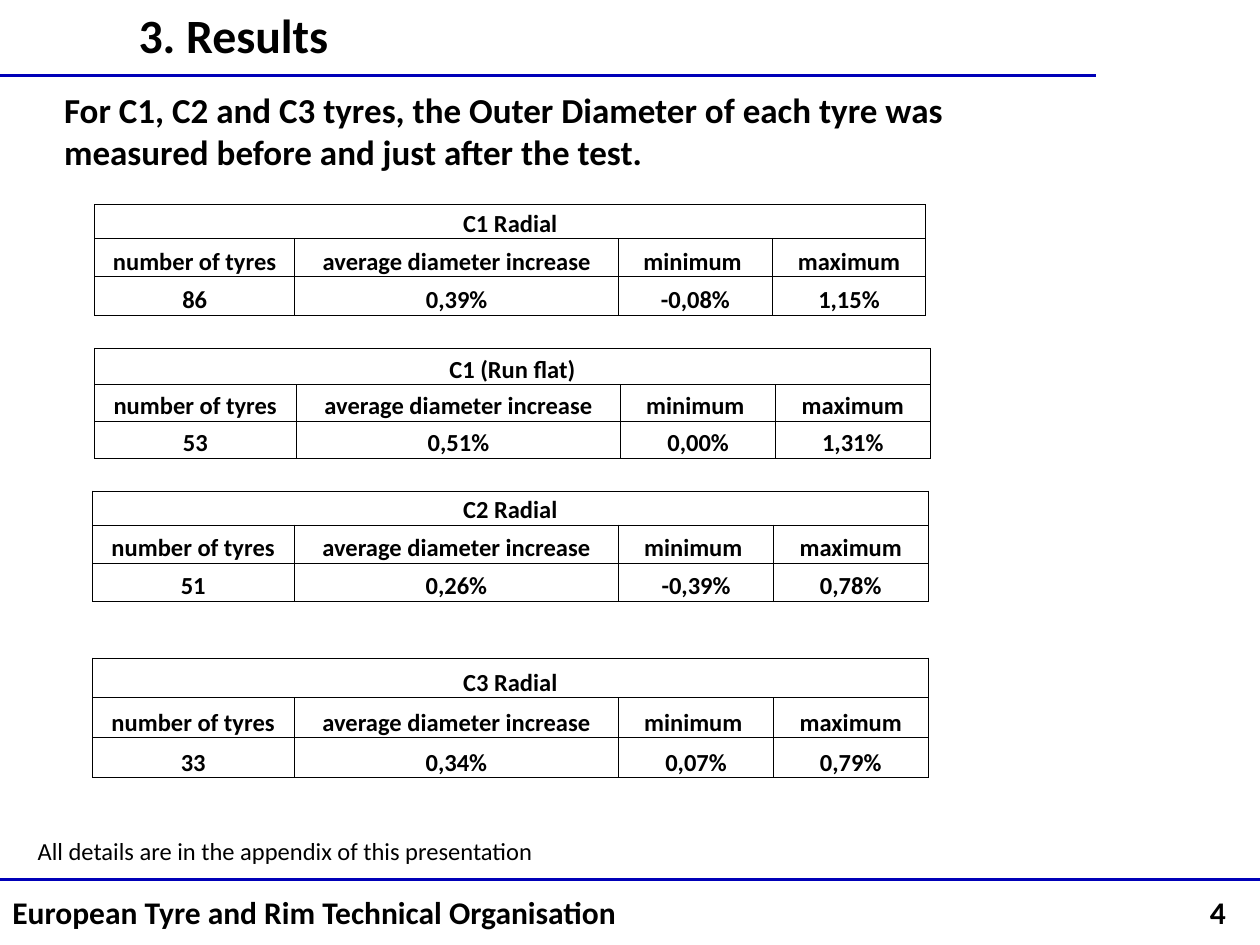
from dataclasses import dataclass

from lxml import etree
from pptx import Presentation
from pptx.dml.color import RGBColor
from pptx.enum.shapes import MSO_CONNECTOR
from pptx.enum.text import MSO_ANCHOR as Anchor, PP_ALIGN as Align
from pptx.oxml import parse_xml
from pptx.oxml.ns import nsdecls, qn
from pptx.util import Pt


@dataclass(frozen=True)
class Theme:
    font: str = "Calibri"
    ink: str = "000000"
    rule: str = "0000B8"
    rule_width: float = 1.75
    border_width: float = 0.5
    title: float = 27.3
    lead: float = 20
    footer: float = 18
    small: float = 14


class SlideBuilder:
    def __init__(self, slide, theme):
        self.s, self.theme = slide, theme

    def run(self, p, text, size, bold=True):
        r = p.add_run()
        r.text = text
        r.font.name, r.font.size, r.font.bold = self.theme.font, Pt(size), bold
        r.font.color.rgb = RGBColor.from_string(self.theme.ink)

    def rule(self, y, width):
        line = self.s.shapes.add_connector(
            MSO_CONNECTOR.STRAIGHT, Pt(0), Pt(y), Pt(width), Pt(y))
        line.line.color.rgb = RGBColor.from_string(self.theme.rule)
        line.line.width = Pt(self.theme.rule_width)
        etree.SubElement(line._element.spPr, qn("a:effectLst"))

    def text(self, box, text, size, bold=True, anchor=Anchor.TOP,
             align=Align.LEFT, inset=7.2, right_tab=None):
        sp = self.s.shapes.add_textbox(*map(Pt, box))
        tf = sp.text_frame
        tf.word_wrap, tf.vertical_anchor = True, anchor
        tf.margin_left = Pt(inset)
        p = tf.paragraphs[0]
        p.alignment = align
        if right_tab:
            p._p.get_or_add_pPr().append(parse_xml(
                f'<a:tabLst {nsdecls("a")}>'
                f'<a:tab pos="{Pt(right_tab)}" algn="r"/></a:tabLst>'))
        self.run(p, text, size, bold)

    def cell(self, cell, text):
        cell.margin_left = cell.margin_right = cell.margin_top = Pt(0.72)
        cell.margin_bottom = Pt(0)
        cell.vertical_anchor = Anchor.BOTTOM
        cell.fill.background()
        props = cell._tc.get_or_add_tcPr()
        for i, side in enumerate("LRTB"):
            props.insert(i, parse_xml(
                f'<a:ln{side} {nsdecls("a")} w="{Pt(self.theme.border_width)}">'
                f'<a:solidFill><a:srgbClr val="{self.theme.ink}"/></a:solidFill>'
                f'</a:ln{side}>'))
        if text:
            p = cell.text_frame.paragraphs[0]
            p.alignment = Align.CENTER
            self.run(p, text, self.theme.small)

    def table(self, left, top, widths, heights, rows):
        frame = self.s.shapes.add_table(
            len(rows), len(widths), Pt(left), Pt(top),
            Pt(sum(widths)), Pt(sum(heights)))
        table = frame.table
        table.first_row = table.horz_banding = False
        for column, width in zip(table.columns, widths):
            column.width = Pt(width)
        for row, height in zip(table.rows, heights):
            row.height = Pt(height)
        for i, row in enumerate(rows):
            for j, text in enumerate(row):
                self.cell(table.cell(i, j), text)
        table.cell(0, 0).merge(table.cell(0, len(widths) - 1))


HEADINGS = ["number of tyres", "average diameter increase", "minimum ", "maximum"]
NARROW = [114.5, 185, 87.8, 87.8]
WIDE = [115.2, 185.6, 88.4, 88.4]
SHORT_TOP = [19.4, 21.8, 21.8]

# Tyre class, left, top, column widths, row heights, values
RESULTS = [
    ("C1 Radial", 54, 117, NARROW, SHORT_TOP, ["86", "0,39%", "-0,08%", "1,15%"]),
    ("C1 (Run flat)", 54, 199, WIDE, [20.9] * 3, ["53", "0,51%", "0,00%", "1,31%"]),
    ("C2 Radial", 52.8, 280.6, WIDE, SHORT_TOP, ["51", "0,26%", "-0,39%", "0,78%"]),
    ("C3 Radial", 52.8, 376, WIDE, [22.8] * 3, ["33", "0,34%", "0,07%", "0,79%"]),
]


def main():
    prs = Presentation()
    prs.slide_width, prs.slide_height = Pt(720), Pt(540)
    theme = Theme()
    b = SlideBuilder(prs.slides.add_slide(prs.slide_layouts[6]), theme)

    # Rules above the footer and below the title
    b.rule(502.5, 720)
    b.rule(43, 626.4)

    # Footer with the page number at the right
    b.text((0, 502.5, 720, 37.5), "European Tyre and Rim Technical Organisation\t4",
           theme.footer, anchor=Anchor.MIDDLE, right_tab=693.4)

    # Title, lead sentence and closing remark
    b.text((0, 0, 632, 45), "3. Results", theme.title, inset=79.2)
    b.text((29.5, 47, 572.5, 104),
           "For C1, C2 and C3 tyres, the Outer Diameter of each tyre was "
           "measured before and just after the test.", theme.lead)
    b.text((14.4, 474, 578, 24.5),
           "All details are in the appendix of this presentation",
           theme.small, bold=False, align=Align.JUSTIFY)

    # One table for each tyre class
    for name, left, top, widths, heights, values in RESULTS:
        b.table(left, top, widths, heights,
                [[name, "", "", ""], HEADINGS, values])

    prs.save("out.pptx")


if __name__ == "__main__":
    main()
